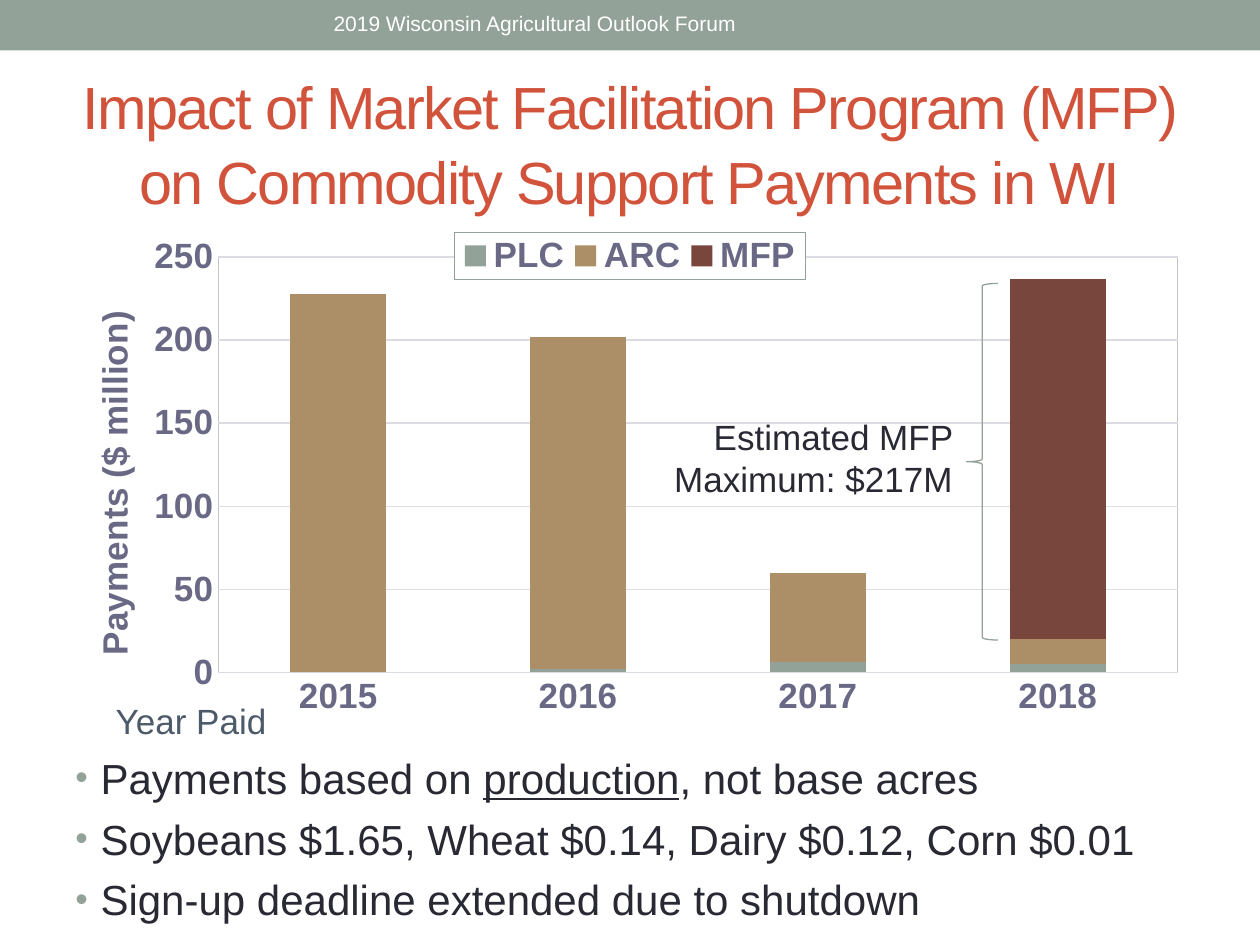
import pptx
import pptx.util
import pptx.chart.data
import pptx.dml.color
import pptx.enum.chart
import pptx.enum.shapes
import pptx.enum.text
import pptx.oxml
import pptx.oxml.ns
from pptx.oxml.ns import qn

Inches, Pt = pptx.util.Inches, pptx.util.Pt
ALIGN = pptx.enum.text.PP_ALIGN
MIDDLE = pptx.enum.text.MSO_ANCHOR.MIDDLE

# Content
FORUM = "2019 Wisconsin Agricultural Outlook Forum"
HEADLINE = "Impact of Market Facilitation Program (MFP) on Commodity Support Payments in WI"
YEARS = ["2015", "2016", "2017", "2018"]
PROGRAMS = [("PLC", (0, 2, 6, 5), "sage"),
            ("ARC", (228, 200, 54, 15), "tan"),
            ("MFP", (0, 0, 0, 217), "maroon")]
AXIS_LABEL = "Payments ($ million)"
YEAR_LABEL = "Year Paid"
ESTIMATE = "Estimated MFP Maximum: $217M"
# Each point is a list of (text, underlined)
POINTS = [[("Payments based on ", False), ("production", True), (", not base acres", False)],
          [("Soybeans $1.65, Wheat $0.14, Dairy $0.12, Corn $0.01", False)],
          [("Sign-up deadline extended due to shutdown", False)]]

COLORS = {"sage": "93A299", "tan": "AD8F67", "maroon": "79463D", "headline": "D2533C",
          "ink": "292934", "axis": "696986", "grid": "DCDCE3", "frame": "C4C4C8",
          "slate": "4C5A6A", "white": "FFFFFF"}
FONT = "Arial"

# Layout: full-width band, then content between equal side margins
WIDTH, HEIGHT, MARGIN = 10, 7.5, 0.5
BODY = WIDTH - 2 * MARGIN
PLOT_AREA = (0.137, 0.045, 0.846, 0.706)
LEGEND_AREA = (0.345, 0.003, 0.31, 0.08)
AXIS_LABEL_AT = (0.02, 0.126)


def rgb(name):
    return pptx.dml.color.RGBColor.from_string(COLORS[name])


def style(font, size, color, bold=False):
    font.name, font.size, font.bold = FONT, Pt(size), bold
    font.color.rgb = rgb(color)


def add_text(slide, box, text, size, color, align=ALIGN.LEFT, anchor=None):
    frame = slide.shapes.add_textbox(*map(Inches, box)).text_frame
    frame.word_wrap = True
    if anchor is not None:
        frame.vertical_anchor = anchor
    paragraph = frame.paragraphs[0]
    paragraph.text, paragraph.alignment = text, align
    style(paragraph.font, size, color)
    return frame


def chart_xml(tag, content):
    return pptx.oxml.parse_xml(f'<c:{tag} {pptx.oxml.ns.nsdecls("c", "a")}>{content}</c:{tag}>')


def place(part, index, area, inner=False):
    """Fix a chart part at shares of the chart's size."""
    for old in part.findall(qn("c:layout")):
        part.remove(old)
    target = '<c:layoutTarget val="inner"/>' if inner else ""
    modes = '<c:xMode val="edge"/><c:yMode val="edge"/>'
    sizes = "".join(f'<c:{key} val="{value}"/>' for key, value in zip("xywh", area))
    part.insert(index, chart_xml("layout", f"<c:manualLayout>{target}{modes}{sizes}</c:manualLayout>"))


def outline(color, fill="<a:noFill/>"):
    line = f'<a:ln w="9525"><a:solidFill><a:srgbClr val="{COLORS[color]}"/></a:solidFill></a:ln>'
    return chart_xml("spPr", fill + line)


def add_payments_chart(slide):
    data = pptx.chart.data.CategoryChartData()
    data.categories = YEARS
    for program, payments, _ in PROGRAMS:
        data.add_series(program, payments)
    chart = slide.shapes.add_chart(
        pptx.enum.chart.XL_CHART_TYPE.COLUMN_STACKED,
        *map(Inches, (MARGIN, 1.83, BODY, 4.67)), data).chart
    chart.has_title = False
    style(chart.font, 20, "ink", True)

    # Columns
    columns = chart.plots[0]
    columns.gap_width, columns.overlap, columns.vary_by_categories = 150, 100, False
    for series, (_, _, color) in zip(columns.series, PROGRAMS):
        series.format.fill.solid()
        series.format.fill.fore_color.rgb = rgb(color)

    # Axes
    years, payments = chart.category_axis, chart.value_axis
    for axis in (years, payments):
        style(axis.tick_labels.font, 20, "axis", True)
        axis.major_tick_mark = axis.minor_tick_mark = pptx.enum.chart.XL_TICK_MARK.NONE
    payments.minimum_scale, payments.maximum_scale, payments.major_unit = 0, 250, 50
    payments.tick_labels.number_format = "#,##0"
    payments.tick_labels.number_format_is_linked = False
    payments.format.line.fill.background()
    for line in (years.format.line, payments.major_gridlines.format.line):
        line.color.rgb, line.width = rgb("grid"), Pt(0.75)
    label = payments.axis_title
    label.text_frame.text = AXIS_LABEL
    style(label.text_frame.paragraphs[0].font, 20, "axis", True)
    place(label._element, 1, AXIS_LABEL_AT)

    # Legend
    chart.has_legend = True
    legend = chart.legend
    legend.position = pptx.enum.chart.XL_LEGEND_POSITION.BOTTOM
    legend.include_in_layout = False
    style(legend.font, 20, "axis", True)
    place(legend._element, 1, LEGEND_AREA)
    white = f'<a:solidFill><a:srgbClr val="{COLORS["white"]}"/></a:solidFill>'
    legend._element.find(qn("c:overlay")).addnext(outline("sage", white))

    # Plot frame
    plot_area = chart._chartSpace.chart.plotArea
    place(plot_area, 0, PLOT_AREA, inner=True)
    plot_area.append(outline("frame"))


def add_points(slide):
    frame = slide.shapes.add_textbox(*map(Inches, (MARGIN, 5.92, BODY, 1.5))).text_frame
    frame.word_wrap = True
    for number, runs in enumerate(POINTS):
        paragraph = frame.add_paragraph() if number else frame.paragraphs[0]
        for text, underlined in runs:
            run = paragraph.add_run()
            run.text = text
            if underlined:
                run.font.underline = True
        style(paragraph.font, 24, "ink")
        paragraph.space_before = Pt(6)
        props = paragraph._p.get_or_add_pPr()
        props.set("marL", str(Inches(0.2)))
        props.set("indent", str(-Inches(0.2)))
        bullet = (f'<a:buClr><a:srgbClr val="{COLORS["sage"]}"/></a:buClr>',
                  '<a:buSzPct val="85000"/>', f'<a:buFont typeface="{FONT}"/>',
                  '<a:buChar char="•"/>')
        holder = pptx.oxml.parse_xml(f'<a:pPr {pptx.oxml.ns.nsdecls("a")}>{"".join(bullet)}</a:pPr>')
        for part in list(holder):
            props.find(qn("a:defRPr")).addprevious(part)


def main():
    deck = pptx.Presentation()
    deck.slide_width, deck.slide_height = Inches(WIDTH), Inches(HEIGHT)
    slide = deck.slides.add_slide(deck.slide_layouts[6])
    shapes = pptx.enum.shapes.MSO_SHAPE

    # Header band
    band = slide.shapes.add_shape(shapes.RECTANGLE, 0, 0, Inches(WIDTH), Inches(0.4))
    band.shadow.inherit = False
    band.fill.solid()
    band.fill.fore_color.rgb = rgb("sage")
    band.line.fill.background()

    # Headline
    headline = add_text(slide, (MARGIN, 0.58, BODY, 1.08), HEADLINE, 34, "headline",
                        ALIGN.CENTER, MIDDLE).paragraphs[0]
    headline.line_spacing = 1.05
    headline.runs[0].font._element.set("spc", "-100")

    # Chart and its annotations
    add_payments_chart(slide)
    add_text(slide, (0.82, 5.5, 1.67, 0.44), YEAR_LABEL, 20, "slate")
    brace = slide.shapes.add_shape(shapes.LEFT_BRACE, *map(Inches, (7.67, 2.25, 0.25, 2.83)))
    brace.shadow.inherit = False
    brace.fill.background()
    brace.line.color.rgb, brace.line.width = rgb("sage"), Pt(0.75)
    add_text(slide, (5.08, 3.25, 2.58, 0.77), ESTIMATE, 20, "ink", ALIGN.RIGHT)

    # Forum name and key points
    add_text(slide, (2.49, 0, 3.51, 0.36), FORUM, 12, "white", ALIGN.CENTER, MIDDLE)
    add_points(slide)
    deck.save("out.pptx")


if __name__ == "__main__":
    main()
